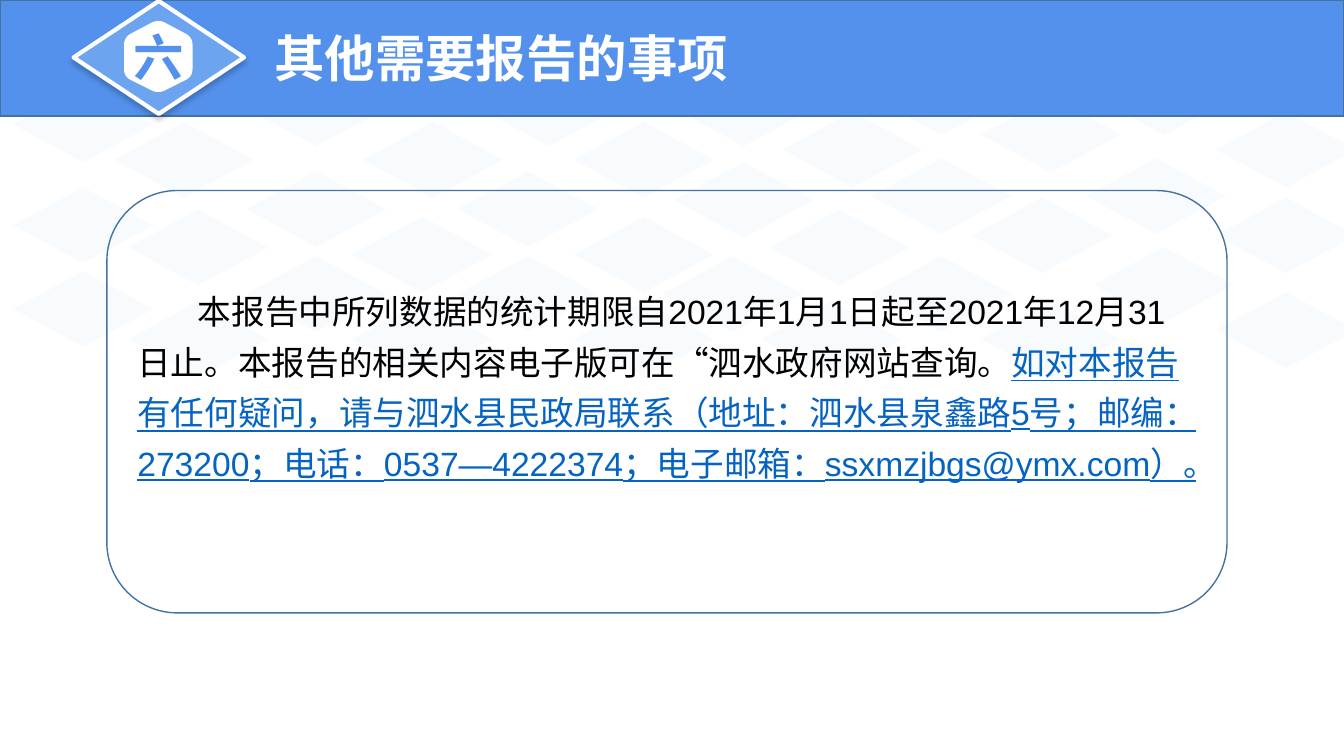
from lxml import etree
from pptx import Presentation
from pptx.dml.color import RGBColor
from pptx.enum.shapes import MSO_SHAPE
from pptx.enum.text import MSO_ANCHOR, MSO_AUTO_SIZE, PP_ALIGN
from pptx.oxml import parse_xml
from pptx.oxml.ns import nsdecls, qn
from pptx.util import Pt

PX = 9144  # 100 px to the inch
DIAMOND, RECTANGLE, ROUNDED = MSO_SHAPE.DIAMOND, MSO_SHAPE.RECTANGLE, MSO_SHAPE.ROUNDED_RECTANGLE
MIDDLE, LEFT, CENTER = MSO_ANCHOR.MIDDLE, PP_ALIGN.LEFT, PP_ALIGN.CENTER
NO_AUTOFIT = MSO_AUTO_SIZE.NONE
COLORS = {
    "pattern": "DEEBF7", "band": "5391ED", "badge": "6CA4F0", "outline": "43739E",
    "white": "FFFFFF", "text": "000000", "link": "0563C1",
}


def style_shape(shape, fill=None, line=None, width=1):
    shape.shadow.inherit = False
    if fill:
        shape.fill.solid()
        shape.fill.fore_color.rgb = RGBColor.from_string(COLORS[fill])
    else:
        shape.fill.background()
    if line:
        shape.line.color.rgb = RGBColor.from_string(COLORS[line])
        shape.line.width = Pt(width)
    else:
        shape.line.fill.background()


def style_span(span, size, color, font="Arial", bold=False):
    span.font.size = Pt(size)
    span.font.name = font
    span.font.bold = bold
    span.font.color.rgb = RGBColor.from_string(COLORS[color])


deck = Presentation()
deck.slide_width, deck.slide_height = 1333 * PX, 750 * PX
page = deck.slides.add_slide(deck.slide_layouts[5])

# Faint diamond pattern: column left -> tops
pattern_columns = {
    13: [86, 186, 269], 113: [121], 127: [208, 299], 244: [70, 170, 254],
    349: [215, 299], 360: [121], 454: [170, 254], 475: [70],
    569: [121, 215, 299], 657: [254], 668: [70, 161], 755: [299],
    763: [208], 776: [111], 864: [59, 157, 254], 964: [196],
    973: [96, 299], 1077: [157], 1085: [59, 245], 1206: [21, 111, 196, 290],
}
pattern = page.shapes.add_group_shape()
for left, tops in pattern_columns.items():
    for top in tops:
        tile = pattern.shapes.add_shape(DIAMOND, left * PX, top * PX, 139 * PX, 75 * PX)
        style_shape(tile, "pattern")
        tile_color = tile.element.spPr.find(qn("a:solidFill"))[0]
        etree.SubElement(tile_color, qn("a:alpha"), val="20000")

# Header band and badge diamond
header = page.shapes.add_group_shape()
band = header.shapes.add_shape(RECTANGLE, 0, 0, 1333 * PX, 115 * PX)
style_shape(band, "band", "outline")
badge = header.shapes.add_shape(DIAMOND, 73 * PX, 1 * PX, 169 * PX, 112 * PX)
style_shape(badge, "badge", "white", 3)
badge.element.spPr.find(qn("a:effectLst")).append(parse_xml(
    f'<a:outerShdw {nsdecls("a")} blurRad="{Pt(4)}" dist="{Pt(3)}" dir="5400000" algn="t" rotWithShape="0">'
    '<a:srgbClr val="000000"><a:alpha val="22000"/></a:srgbClr></a:outerShdw>'))

# Hexagon with rounded corners
corners = [(157, 19), (191, 37), (191, 76), (157, 93), (123, 76), (123, 37)]
CUT = 0.2  # share of each side taken by a corner
STEPS = 8
outline = []
for index, (x, y) in enumerate(corners):
    before, after = corners[index - 1], corners[(index + 1) % len(corners)]
    for step in range(STEPS + 1):
        t = step / STEPS
        pull_before, pull_after = CUT * (1 - t) ** 2, CUT * t ** 2
        outline.append((
            (x + pull_before * (before[0] - x) + pull_after * (after[0] - x)) * PX,
            (y + pull_before * (before[1] - y) + pull_after * (after[1] - y)) * PX))
builder = header.shapes.build_freeform(*outline[0])
builder.add_line_segments(outline[1:], close=True)
hexagon = builder.convert_to_shape()
style_shape(hexagon, "white")
frame = hexagon.text_frame
frame.text = "六"
frame.word_wrap = False
frame.vertical_anchor = MIDDLE
frame.margin_left = frame.margin_right = 0
frame.paragraphs[0].alignment = CENTER
style_span(frame.paragraphs[0].runs[0], 36, "band", "Arial Narrow", True)

# Statement box
box = page.shapes.add_shape(ROUNDED, 106 * PX, 189 * PX, 1111 * PX, 419 * PX)
style_shape(box, None, "outline")
frame = box.text_frame
frame.word_wrap = True
frame.vertical_anchor = MIDDLE
frame.margin_bottom = 44 * PX
para = frame.paragraphs[0]
para.alignment = LEFT
para.line_spacing = Pt(36)
box.element.find(".//" + qn("a:pPr")).set("indent", str(60 * PX))
statement = [
    ("本报告中所列数据的统计期限自2021年1月1日起至2021年12月31日止。"
     "本报告的相关内容电子版可在“泗水政府网站查询。", "text"),
    ("如对本报告有任何疑问，请与泗水县民政局联系（地址：泗水县泉鑫路5号；邮编：273200；"
     "电话：0537—4222374；电子邮箱：ssxmzjbgs@ymx.com）。", "link"),
]
for wording, color in statement:
    span = para.add_run()
    span.text = wording
    style_span(span, 24, color)
    span.font.underline = color == "link"

# Title, placed above the band
title = page.shapes.title
title.left, title.top, title.width, title.height = 272 * PX, 21 * PX, 914 * PX, 71 * PX
frame = title.text_frame
frame.text = "其他需要报告的事项"
frame.word_wrap = True
frame.auto_size = NO_AUTOFIT
frame.vertical_anchor = MIDDLE
frame.margin_left = frame.margin_right = 0
frame.paragraphs[0].alignment = LEFT
style_span(frame.paragraphs[0].runs[0], 36, "white", bold=True)
box.element.addprevious(title.element)

deck.save("out.pptx")
